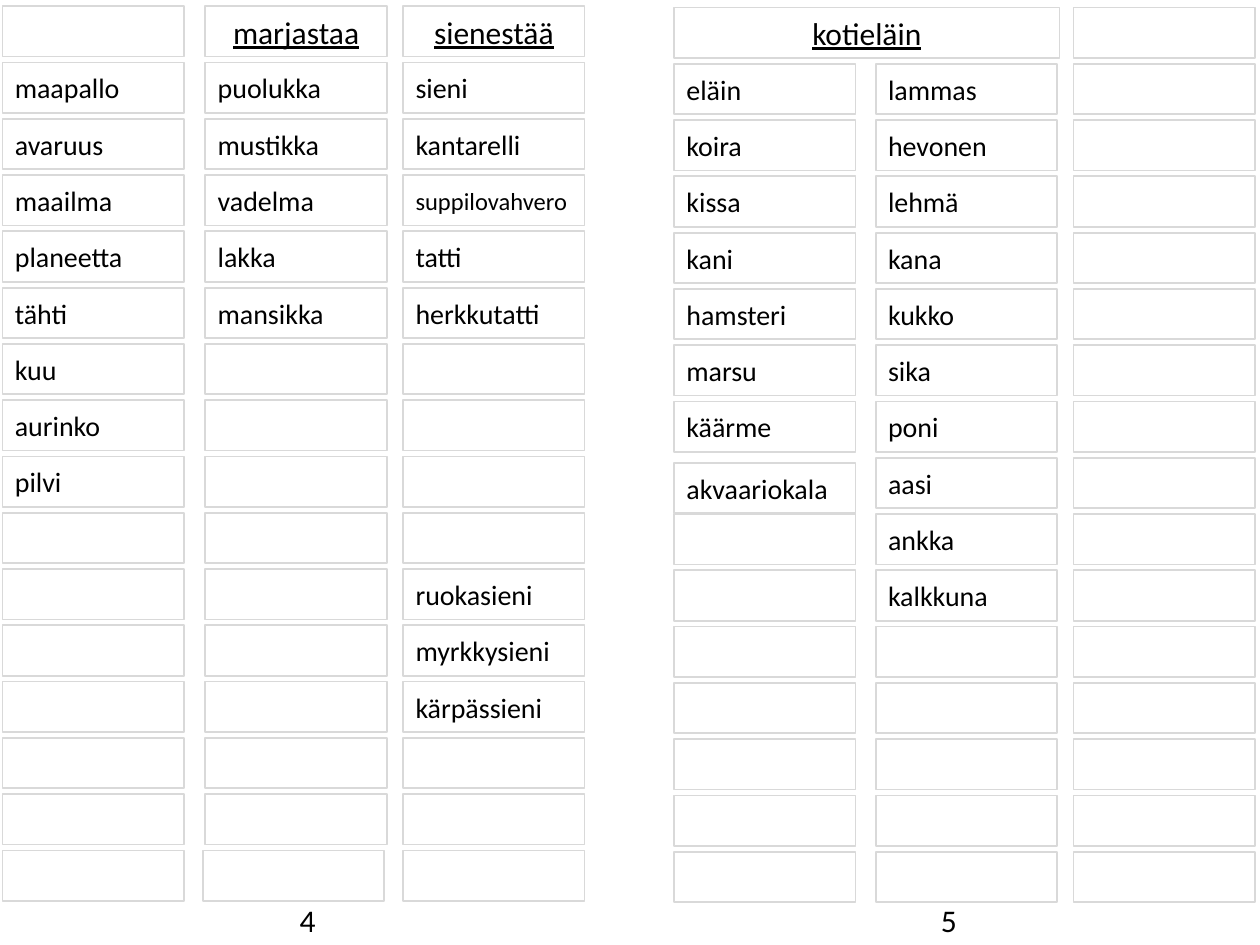
from pptx import Presentation
from pptx.util import Inches, Pt
from pptx.dml.color import RGBColor
from pptx.enum.shapes import MSO_SHAPE as Shape
from pptx.enum.text import MSO_ANCHOR as Anchor, PP_ALIGN as Align

COLORS = {"border": "D9D9D9", "text": "000000"}
FONT = "Calibri"

PAGES = [
    {
        "number": "4", "number_left": 2.28, "number_width": 0.28, "top": 0.05,
        "headings": [(0.02, 1.44, ""), (1.63, 1.44, "marjastaa"), (3.2, 1.44, "sienestää")],
        "columns": [
            (0.02, ["maapallo", "avaruus", "maailma", "planeetta", "tähti", "kuu",
                    "aurinko", "pilvi"]),
            (1.63, ["puolukka", "mustikka", "vadelma", "lakka", "mansikka"]),
            (3.2, ["sieni", "kantarelli", "suppilovahvero", "tatti", "herkkutatti",
                   "", "", "", "", "ruokasieni", "myrkkysieni", "kärpässieni"]),
        ],
    },
    {
        "number": "5", "number_left": 7.37, "number_width": 0.36, "top": 0.06,
        "headings": [(5.35, 3.06, "kotieläin"), (8.52, 1.44, "")],
        "columns": [
            (5.35, ["eläin", "koira", "kissa", "kani", "hamsteri", "marsu", "käärme",
                    "akvaariokala"]),
            (6.95, ["lammas", "hevonen", "lehmä", "kana", "kukko", "sika", "poni",
                    "aasi", "ankka", "kalkkuna"]),
            (8.52, []),
        ],
    },
]
WORD_SIZES = {"suppilovahvero": 14}
NUDGES = {(1.63, 15): (-0.02, 0), (5.35, 8): (0, 0.04)}

WORD_ROWS = 15
PITCH = 6.7 / WORD_ROWS
CARD_WIDTH, CARD_HEIGHT = 1.44, 0.4
NUMBER_TOP = 7.1


def color(name):
    return RGBColor.from_string(COLORS[name])


def write(frame, text, size, align=Align.LEFT, underline=None):
    paragraph = frame.paragraphs[0]
    paragraph.text = text
    paragraph.alignment = align
    font = paragraph.font
    font.name, font.size, font.underline = FONT, Pt(size), underline
    font.color.rgb = color("text")


def add_card(slide, left, top, width, text, size, **style):
    card = slide.shapes.add_shape(
        Shape.RECTANGLE, Inches(left), Inches(top), Inches(width), Inches(CARD_HEIGHT))
    card.shadow.inherit = False
    card.fill.background()
    card.line.color.rgb = color("border")
    card.line.width = Pt(1)
    card.text_frame.vertical_anchor = Anchor.MIDDLE
    if text:
        write(card.text_frame, text, size, **style)


def add_page(slide, page):
    for left, width, heading in page["headings"]:
        add_card(slide, left, page["top"], width, heading, 18,
                 align=Align.CENTER, underline=True)
    for left, words in page["columns"]:
        for row in range(1, WORD_ROWS + 1):
            word = words[row - 1] if row <= len(words) else ""
            dx, dy = NUDGES.get((left, row), (0, 0))
            add_card(slide, left + dx, page["top"] + row * PITCH + dy, CARD_WIDTH,
                     word, WORD_SIZES.get(word, 16))
    number = slide.shapes.add_textbox(
        Inches(page["number_left"]), Inches(NUMBER_TOP),
        Inches(page["number_width"]), Inches(CARD_HEIGHT))
    number.text_frame.word_wrap = True
    write(number.text_frame, page["number"], 18)


def main():
    deck = Presentation()
    deck.slide_width, deck.slide_height = Inches(10), Inches(7.5)
    slide = deck.slides.add_slide(deck.slide_layouts[6])
    for page in PAGES:
        add_page(slide, page)
    deck.save("out.pptx")


if __name__ == "__main__":
    main()
